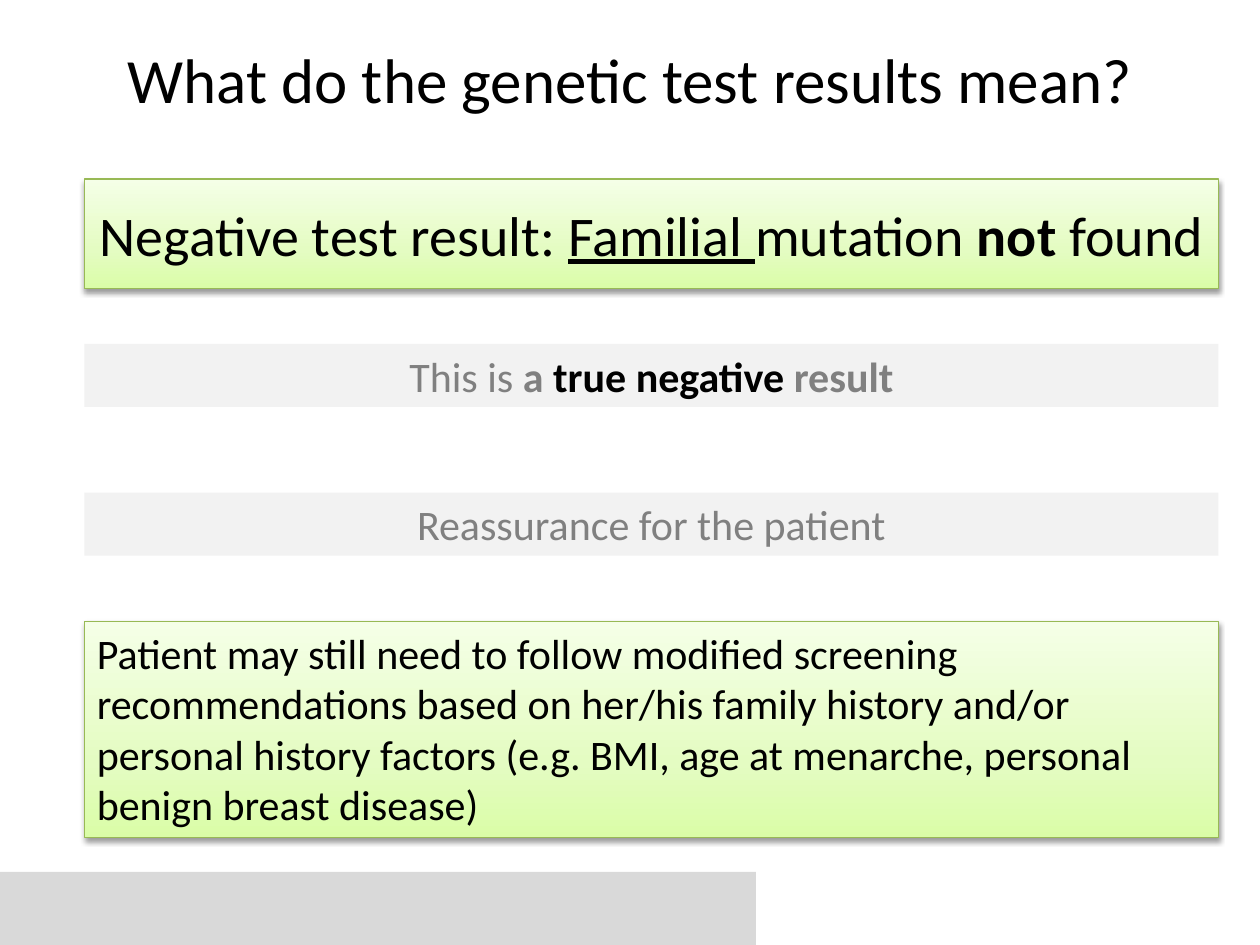
import pptx
import pptx.util
import pptx.dml.color
import pptx.enum.shapes
import pptx.enum.text
import pptx.oxml
import pptx.oxml.ns
from pptx.util import Inches

COLORS = {
    "text": "000000",
    "muted": "808080",
    "band": "F2F2F2",
    "footer": "D9D9D9",
    "green_line": "98B955",
    "green_dark": "DAFDA7",
    "green_mid": "E4FCC2",
    "green_light": "F5FFE7",
    "shadow": "000000",
}
GREEN_STOPS = [(0, "green_dark"), (35, "green_mid"), (100, "green_light")]
NAMESPACE = pptx.oxml.ns.nsdecls("a")
CENTER = pptx.enum.text.PP_ALIGN.CENTER
LEFT = pptx.enum.text.PP_ALIGN.LEFT
MIDDLE = pptx.enum.text.MSO_ANCHOR.MIDDLE
TOP = pptx.enum.text.MSO_ANCHOR.TOP


def write_runs(shape, runs, size, alignment, anchor):
    """Fill a shape with one paragraph of (text, color, style) runs."""
    frame = shape.text_frame
    frame.word_wrap = True
    frame.vertical_anchor = anchor
    paragraph = frame.paragraphs[0]
    paragraph.alignment = alignment
    for text, color, style in runs:
        run = paragraph.add_run()
        run.text = text
        run.font.name = "Calibri"
        run.font.size = pptx.util.Pt(size)
        run.font.bold = style == "bold"
        run.font.underline = style == "underline"
        run.font.color.rgb = pptx.dml.color.RGBColor.from_string(COLORS[color])


def add_box(left, top, width, height, fill):
    """Add a plain rectangle, or a green gradient one with a soft shadow."""
    shape = slide.shapes.add_shape(
        pptx.enum.shapes.MSO_SHAPE.RECTANGLE,
        Inches(left), Inches(top), Inches(width), Inches(height))
    shape.shadow.inherit = False
    if fill != "green":
        shape.fill.solid()
        shape.fill.fore_color.rgb = pptx.dml.color.RGBColor.from_string(COLORS[fill])
        shape.line.fill.background()
        return shape

    shape.fill.gradient()
    shape.fill.gradient_angle = 90
    properties = shape._element.spPr
    stops = properties.find(".//" + pptx.oxml.ns.qn("a:gsLst"))
    for stop in list(stops):
        stops.remove(stop)
    for position, color in GREEN_STOPS:
        stops.append(pptx.oxml.parse_xml(
            f'<a:gs {NAMESPACE} pos="{position * 1000}">'
            f'<a:srgbClr val="{COLORS[color]}"/></a:gs>'))
    shape.line.color.rgb = pptx.dml.color.RGBColor.from_string(COLORS["green_line"])
    shape.line.width = pptx.util.Pt(0.75)
    effects = properties.find(pptx.oxml.ns.qn("a:effectLst"))
    effects.append(pptx.oxml.parse_xml(
        f'<a:outerShdw {NAMESPACE} blurRad="{pptx.util.Pt(3.1)}" '
        f'dist="{pptx.util.Pt(1.6)}" dir="5400000" rotWithShape="0">'
        f'<a:srgbClr val="{COLORS["shadow"]}"><a:alpha val="38000"/></a:srgbClr>'
        '</a:outerShdw>'))
    return shape


presentation = pptx.Presentation()
presentation.slide_width = Inches(10)
presentation.slide_height = Inches(7.5)
slide = presentation.slides.add_slide(presentation.slide_layouts[5])

# Footer band, behind everything else
add_box(0, 6.92, 6, 0.58, "footer")

# Title
title = slide.shapes.title
title.left, title.top = Inches(0.5), Inches(0)
title.width, title.height = Inches(9), Inches(1.25)
write_runs(title, [("What do the genetic test results mean?", "text", None)],
           36, CENTER, MIDDLE)

# Stacked boxes: top, height, fill, text size, alignment, anchor, runs
boxes = [
    (1.42, 0.87, "green", 32, CENTER, MIDDLE, [
        ("Negative test result: ", "text", None),
        ("Familial ", "text", "underline"),
        ("mutation ", "text", None),
        ("not", "text", "bold"),
        (" found", "text", None)]),
    (2.73, 0.5, "band", 24, CENTER, TOP, [
        ("This is ", "muted", None),
        ("a ", "muted", "bold"),
        ("true negative ", "text", "bold"),
        ("result", "muted", "bold")]),
    (3.91, 0.5, "band", 24, CENTER, TOP, [
        ("Reassurance for the patient", "muted", None)]),
    (4.93, 1.72, "green", 24, LEFT, TOP, [
        ("Patient may still need to follow modified screening recommendations "
         "based on her/his family history and/or personal history factors "
         "(e.g. BMI, age at menarche, personal benign breast disease)",
         "text", None)]),
]
for top, height, fill, size, alignment, anchor, runs in boxes:
    box = add_box(0.67, top, 9, height, fill)
    write_runs(box, runs, size, alignment, anchor)

presentation.save("out.pptx")
